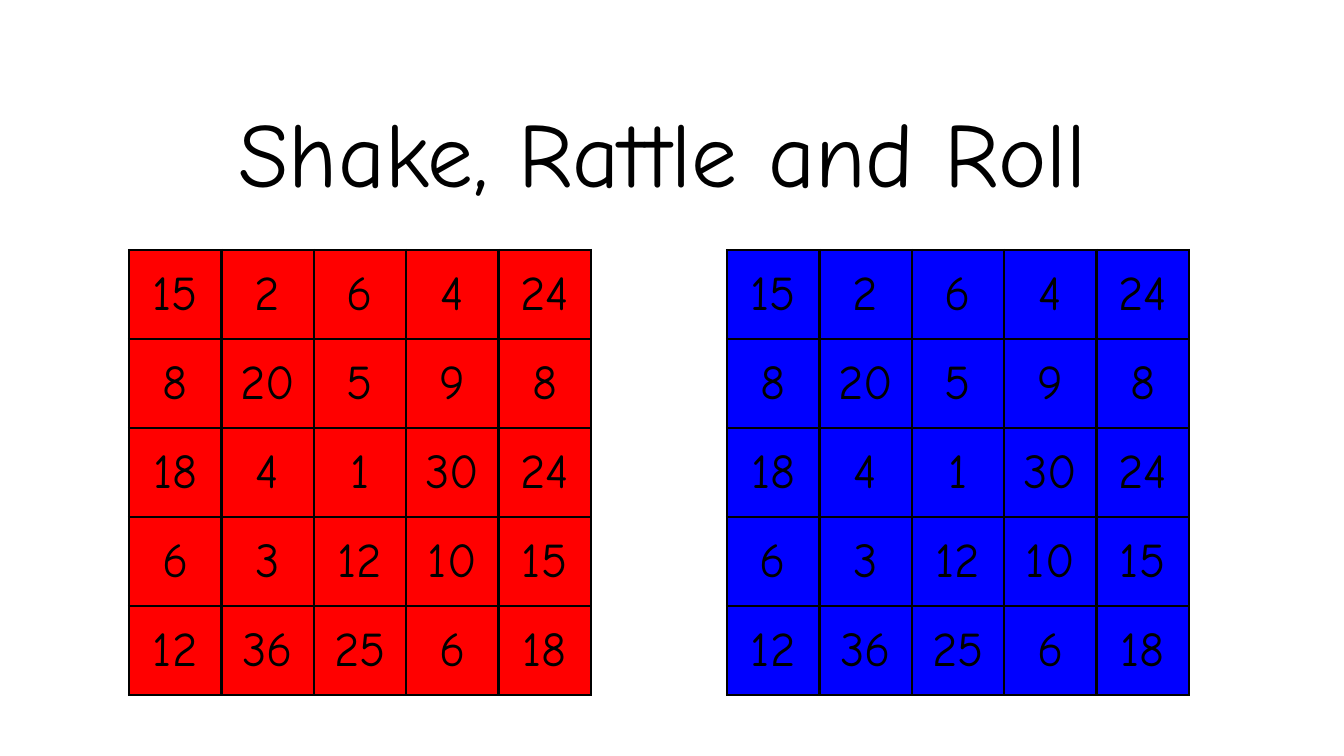
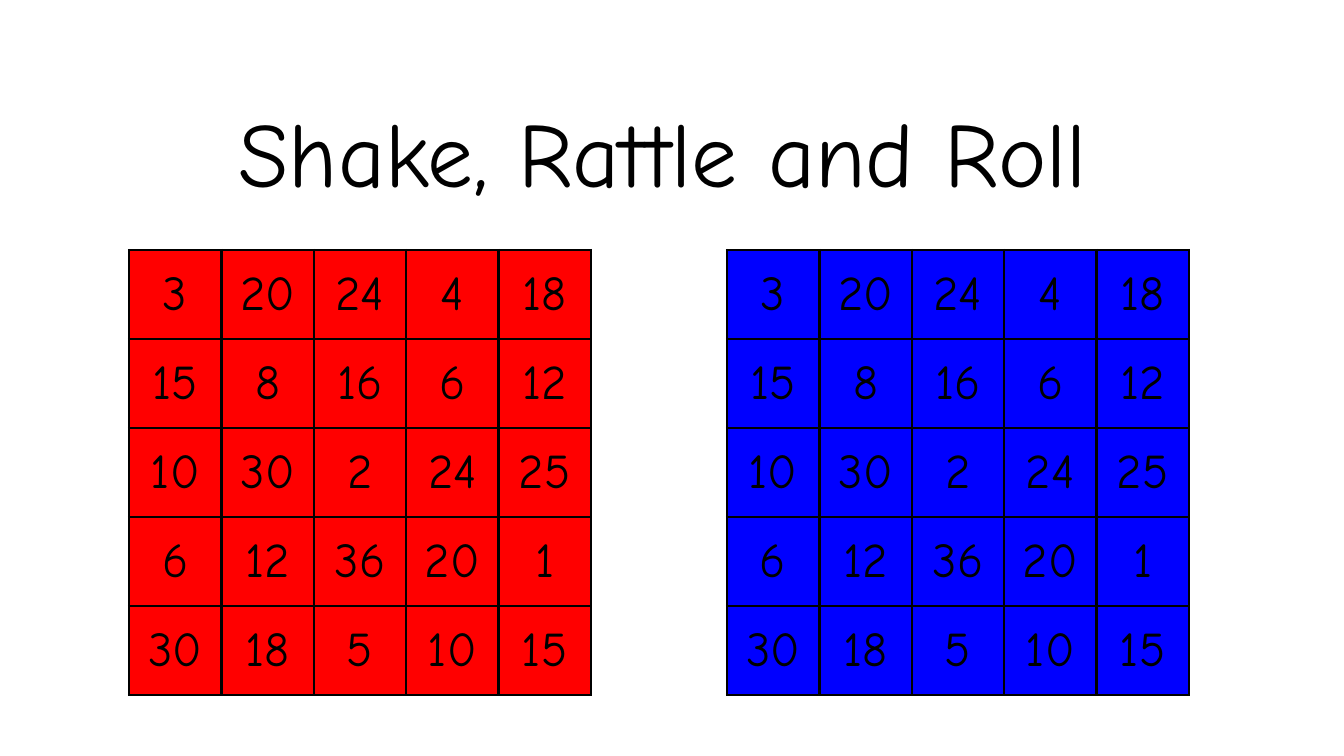
import dataclasses

import lxml.etree
import pptx
import pptx.dml.color
import pptx.enum.text
import pptx.oxml.ns
import pptx.util

PX = 9144000 / 1344


@dataclasses.dataclass(frozen=True)
class Theme:
    font: str = "Comic Neue"
    title_size: int = 49
    number_size: int = 26
    border_width: float = 1.5
    inset: int = 13
    ink: str = "000000"
    paper: str = "FFFFFF"
    red: str = "FF0000"
    blue: str = "0000FF"


def px(n):
    return pptx.util.Emu(round(n * PX))


def rgb(value):
    return pptx.dml.color.RGBColor.from_string(value)


def assign(obj, values):
    for name, value in values.items():
        setattr(obj, name, value)


class Deck:
    def __init__(self, theme):
        self.theme = theme
        self.prs = pptx.Presentation()
        self.prs.slide_width, self.prs.slide_height = px(1344), px(756)
        self.s = None

    def slide(self):
        self.s = self.prs.slides.add_slide(self.prs.slide_layouts[0])
        fill = self.s.background.fill
        fill.solid()
        fill.fore_color.rgb = rgb(self.theme.paper)
        subtitle = self.s.placeholders[1].element
        subtitle.getparent().remove(subtitle)

    def style(self, tf, size):
        p = tf.paragraphs[0]
        p.alignment = pptx.enum.text.PP_ALIGN.CENTER
        for r in p.runs:
            assign(r.font, {"name": self.theme.font, "size": pptx.util.Pt(size)})
            r.font.color.rgb = rgb(self.theme.ink)

    def margins(self):
        inset = px(self.theme.inset)
        return {f"margin_{side}": inset for side in ("left", "right", "top", "bottom")}

    def title(self, text, left, top, width, height):
        sp = self.s.shapes.title
        assign(sp, {"left": px(left), "top": px(top), "width": px(width), "height": px(height)})
        tf = sp.text_frame
        tf.text = text
        assign(tf, {
            "word_wrap": True,
            "auto_size": pptx.enum.text.MSO_AUTO_SIZE.NONE,
            "vertical_anchor": pptx.enum.text.MSO_ANCHOR.BOTTOM,
            **self.margins(),
        })
        self.style(tf, self.theme.title_size)

    def board(self, numbers, color, left, top, width, height):
        """Add a bordered number grid with equal cells and one fill colour."""
        frame = self.s.shapes.add_table(
            len(numbers), len(numbers[0]), px(left), px(top), px(width), px(height))
        table = frame.table
        assign(table, {"first_row": False, "horz_banding": False})
        for row, values in enumerate(numbers):
            for col, value in enumerate(values):
                cell = table.cell(row, col)
                cell.text = str(value)
                assign(cell, {
                    "vertical_anchor": pptx.enum.text.MSO_ANCHOR.MIDDLE, **self.margins()})
                cell.fill.solid()
                cell.fill.fore_color.rgb = rgb(color)
                self.style(cell.text_frame, self.theme.number_size)
                self.border(cell)

    def border(self, cell):
        qn = pptx.oxml.ns.qn
        tc_pr = cell._tc.get_or_add_tcPr()
        width = str(pptx.util.Pt(self.theme.border_width))
        for i, tag in enumerate(("a:lnL", "a:lnR", "a:lnT", "a:lnB")):
            ln = lxml.etree.Element(qn(tag), w=width)
            fill = lxml.etree.SubElement(ln, qn("a:solidFill"))
            lxml.etree.SubElement(fill, qn("a:srgbClr"), val=self.theme.ink)
            tc_pr.insert(i, ln)


GAMES = [
    [
        [15, 2, 6, 4, 24],
        [8, 20, 5, 9, 8],
        [18, 4, 1, 30, 24],
        [6, 3, 12, 10, 15],
        [12, 36, 25, 6, 18],
    ],
    [
        [3, 20, 24, 4, 18],
        [15, 8, 16, 6, 12],
        [10, 30, 2, 24, 25],
        [6, 12, 36, 20, 1],
        [30, 18, 5, 10, 15],
    ],
]


def main():
    theme = Theme()
    deck = Deck(theme)
    for numbers in GAMES:
        deck.slide()
        deck.title("Shake, Rattle and Roll", 36, 65, 1253, 154)
        for color, left in ((theme.red, 129), (theme.blue, 727)):
            deck.board(numbers, color, left, 250, 462, 445)
    deck.prs.save("out.pptx")


if __name__ == "__main__":
    main()
